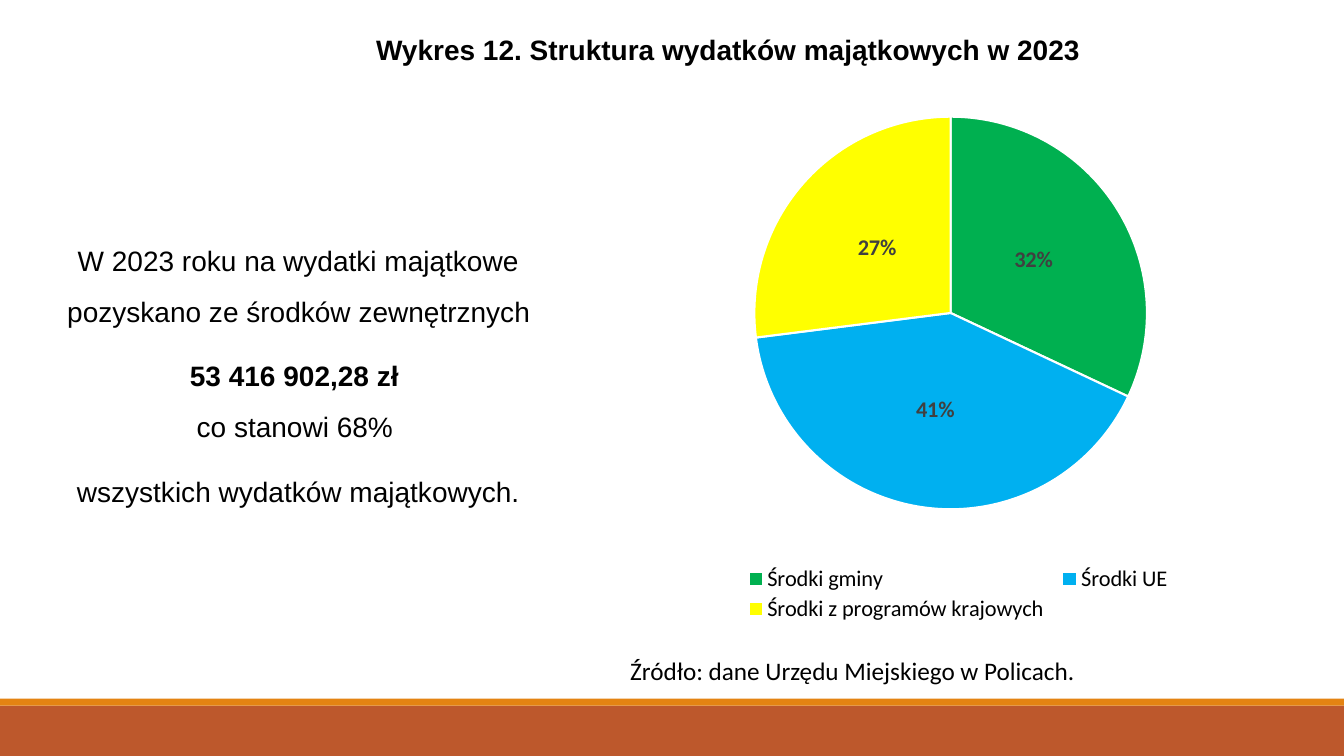
from dataclasses import dataclass

from lxml import etree
from pptx import Presentation
from pptx.chart.data import CategoryChartData
from pptx.dml.color import RGBColor
from pptx.enum.chart import XL_CHART_TYPE, XL_LABEL_POSITION, XL_LEGEND_POSITION
from pptx.enum.shapes import MSO_SHAPE
from pptx.enum.text import PP_ALIGN
from pptx.oxml.ns import qn
from pptx.util import Pt


@dataclass(frozen=True)
class Theme:
    text: RGBColor = RGBColor(0, 0, 0)
    label: RGBColor = RGBColor(0x40, 0x40, 0x40)
    white: RGBColor = RGBColor(0xFF, 0xFF, 0xFF)
    footer: RGBColor = RGBColor(0xBD, 0x58, 0x2C)
    stripe: RGBColor = RGBColor(0xE4, 0x83, 0x12)
    slices: tuple = (
        RGBColor(0, 0xB0, 0x50),
        RGBColor(0, 0xB0, 0xF0),
        RGBColor(0xFF, 0xFF, 0),
    )
    heading_font: str = "Arial"
    chart_font: str = "Calibri"
    body_size: int = 20
    source_size: int = 18
    chart_size: int = 16


theme = Theme()


def add_text(place, paragraphs, font, size, align, indent, spacing, after):
    """Add a text box; each paragraph is a list of (text, bold) runs, "\\n" being a line break."""
    frame = page.shapes.add_textbox(*map(Pt, place)).text_frame
    frame.word_wrap = True
    for index, spans in enumerate(paragraphs):
        para = frame.paragraphs[0] if index == 0 else frame.add_paragraph()
        para.alignment = align
        para.line_spacing = spacing
        para.space_after = Pt(after)
        properties = para._p.get_or_add_pPr()
        properties.set("marL", str(Pt(indent)))
        properties.set("indent", str(Pt(-0.7)))
        for text, bold in spans:
            if text == "\n":
                para.add_line_break()
                continue
            span = para.add_run()
            span.text = text
            span.font.name = font
            span.font.size = Pt(size)
            span.font.bold = bold
            span.font.color.rgb = theme.text


def place_in_chart(parent, position, x, y, w, h, inner=False):
    """Fix a chart part at fractions of the chart area."""
    for old in parent.findall(qn("c:layout")):
        parent.remove(old)
    layout = etree.Element(qn("c:layout"))
    manual = etree.SubElement(layout, qn("c:manualLayout"))
    settings = [("layoutTarget", "inner")] if inner else []
    settings += [("xMode", "edge"), ("yMode", "edge"), ("x", x), ("y", y), ("w", w), ("h", h)]
    for name, value in settings:
        etree.SubElement(manual, qn(f"c:{name}")).set("val", str(value))
    parent.insert(position, layout)


deck = Presentation()
deck.slide_width, deck.slide_height = Pt(960), Pt(540)
page = deck.slides.add_slide(deck.slide_layouts[6])

# Footer bands
for top, height, color in ((504, 36, theme.footer), (499, 5, theme.stripe)):
    band = page.shapes.add_shape(MSO_SHAPE.RECTANGLE, Pt(0), Pt(top), Pt(960), Pt(height))
    band.shadow.inherit = False
    band.fill.solid()
    band.fill.fore_color.rgb = color
    band.line.fill.background()

# Pie chart of funding sources
funding = CategoryChartData(number_format="0")
funding.categories = ["Środki gminy", "Środki UE", "Środki z programów krajowych"]
funding.add_series("Series 1", (32, 41, 27))
chart = page.shapes.add_chart(
    XL_CHART_TYPE.PIE, Pt(414), Pt(72), Pt(535.5), Pt(379), funding
).chart
chart.has_title = False
chart.font.name = theme.chart_font
chart.font.size = Pt(theme.chart_size)
chart.font.color.rgb = theme.text

plot = chart.plots[0]
plot.vary_by_categories = True
for index, color in enumerate(theme.slices):
    piece = plot.series[0].points[index].format
    piece.fill.solid()
    piece.fill.fore_color.rgb = color
    piece.line.color.rgb = theme.white
    piece.line.width = Pt(1.5)

plot.has_data_labels = True
labels = plot.data_labels
labels.show_percentage = True
labels.show_value = False
labels.number_format = "0%"
labels.number_format_is_linked = False
labels.position = XL_LABEL_POSITION.CENTER
labels.font.name = theme.chart_font
labels.font.size = Pt(theme.chart_size)
labels.font.bold = True
labels.font.color.rgb = theme.label

chart.has_legend = True
legend = chart.legend
legend.position = XL_LEGEND_POSITION.BOTTOM
legend.include_in_layout = False
legend.font.name = theme.chart_font
legend.font.size = Pt(theme.chart_size)
legend.font.color.rgb = theme.text

plot_area = chart._chartSpace.chart.plotArea
place_in_chart(plot_area, 0, 0.23, 0.03, 0.53, 0.74, inner=True)
place_in_chart(legend._element, 1, 0.21, 0.87, 0.59, 0.12)

# Texts
add_text(
    (26.5, 158.5, 359.5, 204.5),
    [
        [("W 2023 roku na wydatki majątkowe pozyskano ze środków zewnętrznych ", False)],
        [("53 416 902,28 zł ", True), ("\n", False), ("co stanowi 68% ", False)],
        [("wszystkich wydatków majątkowych.", False)],
    ],
    theme.heading_font, theme.body_size, PP_ALIGN.CENTER, 14.4, 1.5, 10.3,
)
add_text(
    (261.5, 20, 699, 31.5),
    [[("Wykres 12. Struktura wydatków majątkowych w 2023", True)]],
    theme.heading_font, theme.body_size, PP_ALIGN.LEFT, 0.7, 1.0, 10,
)
add_text(
    (443, 461, 480, 31),
    [[("Źródło: dane Urzędu Miejskiego w Policach.", False)]],
    theme.chart_font, theme.source_size, PP_ALIGN.JUSTIFY, 0.7, 1.15, 10.3,
)

deck.save("out.pptx")
